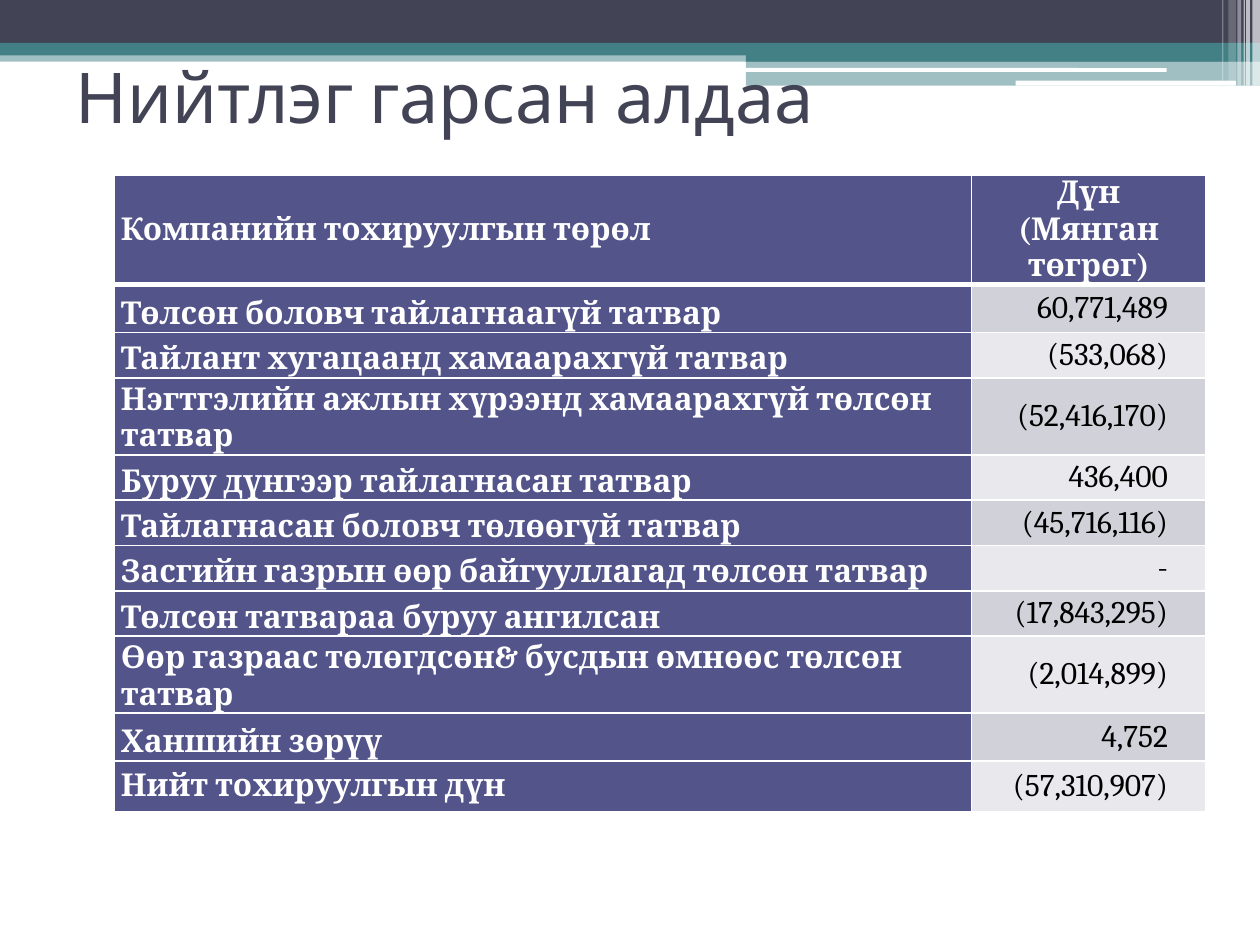
from dataclasses import dataclass

from lxml.etree import SubElement
from pptx import Presentation
from pptx.dml.color import RGBColor
from pptx.enum.shapes import MSO_SHAPE as Shape
from pptx.enum.text import MSO_ANCHOR as Anchor, PP_ALIGN as Align
from pptx.oxml import parse_xml
from pptx.oxml.ns import nsdecls, qn
from pptx.util import Inches, Pt


@dataclass(frozen=True)
class Theme:
    navy: str = "424456"
    teal: str = "438086"
    violet: str = "53548A"
    band_dark: str = "D1D1DA"
    band_light: str = "E9E9ED"
    white: str = "FFFFFF"
    black: str = "000000"
    title_font: str = "Cabin"
    table_font: str = "Cambria"
    title_size: int = 40
    table_size: int = 18


class SlideBuilder:
    """Places elements on a grid of 100 columns by 75 rows."""

    COLUMNS, ROWS = 100, 75

    def __init__(self, presentation, theme):
        self.theme = theme
        self.column = presentation.slide_width / self.COLUMNS
        self.row = presentation.slide_height / self.ROWS
        self.slide = presentation.slides.add_slide(presentation.slide_layouts[5])

    def box(self, left, top, width, height):
        return (round(left * self.column), round(top * self.row),
                round(width * self.column), round(height * self.row))

    def format_text(self, text_frame, font, size, color, bold=False, align=Align.LEFT):
        for paragraph in text_frame.paragraphs:
            paragraph.alignment = align
            for run in paragraph.runs:
                run.font.name, run.font.size, run.font.bold = font, Pt(size), bold
                run.font.color.rgb = RGBColor.from_string(color)

    def bar(self, place, color, opacity=100, kind=Shape.RECTANGLE):
        shape = self.slide.shapes.add_shape(kind, *self.box(*place))
        shape.shadow.inherit = False
        shape.line.fill.background()
        shape.fill.solid()
        shape.fill.fore_color.rgb = RGBColor.from_string(color)
        if opacity < 100:
            tint = shape.fill._xPr.find(".//" + qn("a:srgbClr"))
            SubElement(tint, qn("a:alpha")).set("val", str(opacity * 1000))

    def title(self, text, place):
        shape = self.slide.shapes.title
        shape.left, shape.top, shape.width, shape.height = self.box(*place)
        text_frame = shape.text_frame
        text_frame.text = text
        text_frame.vertical_anchor = Anchor.MIDDLE
        self.format_text(text_frame, self.theme.title_font, self.theme.title_size,
                         self.theme.navy)
        self.slide.shapes._spTree.append(shape._element)  # in front of the bars

    def borders(self, cell, top, bottom):
        for side, points in {"L": 1, "R": 1, "T": top, "B": bottom}.items():
            cell._tc.get_or_add_tcPr().append(parse_xml(
                f'<a:ln{side} {nsdecls("a")} w="{Pt(points)}"><a:solidFill>'
                f'<a:srgbClr val="{self.theme.white}"/></a:solidFill></a:ln{side}>'))

    def cell(self, cell, text, fill, color, bold, align, anchor, right_margin=0.05):
        cell.margin_left, cell.margin_right = Inches(0.05), Inches(right_margin)
        cell.margin_top = cell.margin_bottom = 0
        cell.vertical_anchor = anchor
        cell.fill.solid()
        cell.fill.fore_color.rgb = RGBColor.from_string(fill)
        cell.text_frame.text = text
        paragraph = cell.text_frame.paragraphs[0]
        paragraph.space_before = paragraph.space_after = Pt(2)
        self.format_text(cell.text_frame, self.theme.table_font,
                         self.theme.table_size, color, bold, align)

    def table(self, rows, place, widths, heights):
        theme = self.theme
        table = self.slide.shapes.add_table(len(rows), 2, *self.box(*place)).table
        for column, width in zip(table.columns, widths):
            column.width = round(width * self.column)
        for index, (label, amount) in enumerate(rows):
            table.rows[index].height = round(heights[index] * self.row)
            label_cell, amount_cell = table.cell(index, 0), table.cell(index, 1)
            for cell in (label_cell, amount_cell):
                self.borders(cell, 3 if index == 1 else 1, 3 if index == 0 else 1)
            ends = index in (0, len(rows) - 1)
            self.cell(label_cell, label, theme.violet, theme.white, True,
                      Align.LEFT, Anchor.MIDDLE if ends else Anchor.BOTTOM)
            if index == 0:
                self.cell(amount_cell, amount, theme.violet, theme.white, True,
                          Align.CENTER, Anchor.MIDDLE)
            else:
                band = theme.band_dark if index % 2 else theme.band_light
                self.cell(amount_cell, amount, band, theme.black, False,
                          Align.RIGHT, Anchor.MIDDLE, right_margin=0.3)


ROWS = [
    ("Компанийн тохируулгын төрөл", "Дүн\v(Мянган төгрөг)"),
    ("Төлсөн боловч тайлагнаагүй татвар", "60,771,489"),
    ("Тайлант хугацаанд хамаарахгүй татвар", "(533,068)"),
    ("Нэгтгэлийн ажлын хүрээнд хамаарахгүй төлсөн татвар", "(52,416,170)"),
    ("Буруу дүнгээр тайлагнасан татвар", "436,400"),
    ("Тайлагнасан боловч төлөөгүй татвар", "(45,716,116)"),
    ("Засгийн газрын өөр байгууллагад төлсөн татвар", "-"),
    ("Төлсөн татвараа буруу ангилсан", "(17,843,295)"),
    ("Өөр газраас төлөгдсөн& бусдын өмнөөс төлсөн татвар", "(2,014,899)"),
    ("Ханшийн зөрүү", "4,752"),
    ("Нийт тохируулгын дүн", "(57,310,907)"),
]
HEIGHTS = [8.7, 3.8, 3.6, 6.1, 3.6, 3.6, 3.6, 3.6, 6.1, 3.8, 4]

# Left, width, height and opacity of the stripes in the top right corner
STRIPES = [(99.4, 0.6, 6.8, 65), (98.9, 0.3, 6.8, 65), (98.7, 0.1, 6.8, 60),
           (98.2, 0.3, 6.8, 40), (97.5, 0.6, 6.4, 20), (97, 0.1, 6.4, 30)]


def main():
    presentation = Presentation()
    presentation.slide_width, presentation.slide_height = Inches(10), Inches(7.5)
    theme = Theme()
    builder = SlideBuilder(presentation, theme)

    # Header bands
    builder.bar((0, 4, 100, 0.9), theme.teal, 50)
    builder.bar((0, 0, 100, 3.4), theme.navy)
    builder.bar((0, 3.4, 100, 1), theme.teal)
    builder.bar((59.2, 3.9, 40.8, 1), theme.teal)
    builder.bar((59.2, 4.8, 40.8, 2), theme.teal, 50)

    # White accents
    builder.bar((59.1, 5.4, 33.5, 0.3), theme.white, kind=Shape.ROUNDED_RECTANGLE)
    builder.bar((80.6, 6.4, 17.5, 0.4), theme.white, kind=Shape.ROUNDED_RECTANGLE)
    for left, width, height, opacity in STRIPES:
        builder.bar((left, 0, width, height), theme.white, opacity)

    # Title and table
    builder.title("Нийтлэг гарсан алдаа", (5, 3.6, 90, 7.9))
    builder.table(ROWS, (9.1, 13.9, 86.6, 51), (68, 18.6), HEIGHTS)

    presentation.save("out.pptx")


if __name__ == "__main__":
    main()
